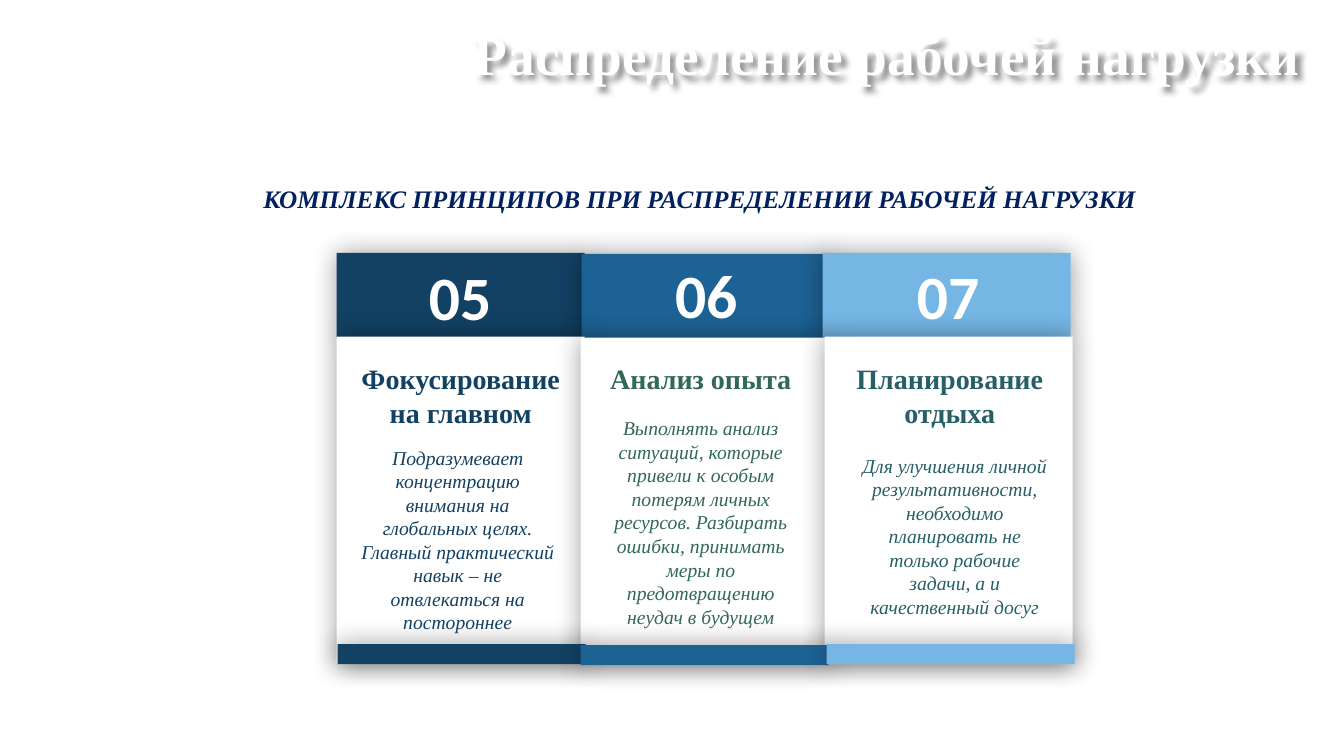
from lxml.etree import SubElement
from pptx import Presentation
from pptx.dml.color import RGBColor
from pptx.enum.shapes import MSO_SHAPE as Preset
from pptx.enum.text import MSO_ANCHOR as Anchor, PP_ALIGN as Align
from pptx.oxml.ns import qn
from pptx.util import Emu, Pt

PX = 9144
SERIF = "Times New Roman"
CARD_WIDTH = 246

TITLE = ("Распределение рабочей нагрузки", (460, 0, 874, 114))
SUBTITLE = ("КОМПЛЕКС ПРИНЦИПОВ ПРИ РАСПРЕДЕЛЕНИИ РАБОЧЕЙ НАГРУЗКИ", (203, 177, 982, 40))

CARDS = [
    {
        "fill": "134163", "ink": "134163",
        "header": (334, 251), "body": (334, 334), "footer": (335, 639),
        "number": ("05", (415, 252, 83, 84)),
        "heading": ("Фокусирование на главном", (347, 354, 220, 77)),
        "detail": (
            "Подразумевает концентрацию внимания на глобальных целях. "
            "Главный практический навык – не отвлекаться на постороннее",
            (348, 437, 212, 199),
        ),
    },
    {
        "fill": "1D6294", "ink": "316857",
        "header": (577, 252), "body": (576, 335), "footer": (576, 640),
        "number": ("06", (659, 250, 83, 84)),
        "heading": ("Анализ опыта", (589, 354, 212, 44)),
        "detail": (
            "Выполнять анализ ситуаций, которые привели к особым потерям личных ресурсов. "
            "Разбирать ошибки, принимать меры по предотвращению неудач в будущем",
            (589, 408, 212, 222),
        ),
    },
    {
        "fill": "75B6E5", "ink": "266066",
        "header": (816, 251), "body": (818, 334), "footer": (820, 639),
        "number": ("07", (899, 251, 83, 84)),
        "heading": ("Планирование отдыха", (836, 354, 212, 77)),
        "detail": (
            "Для улучшения личной результативности, необходимо планировать "
            "не только рабочие задачи, а и качественный досуг",
            (841, 445, 212, 175),
        ),
    },
]
LAYER_HEIGHTS = {"header": 84, "body": 325, "footer": 20}
TEXT_FORMATS = {
    "number": {"size": Pt(44), "name": "Calibri", "bold": True},
    "heading": {"size": Pt(20), "name": SERIF, "bold": True},
    "detail": {"size": Pt(14), "name": SERIF, "italic": True},
}


def color(value):
    return RGBColor.from_string(value)


def scaled(box):
    return [Emu(length * PX) for length in box]


def add_shadow(shape, blur, distance, angle, opacity):
    shape.shadow.inherit = False
    effects = shape._element.spPr.find(qn("a:effectLst"))
    shadow = SubElement(
        effects, qn("a:outerShdw"), blurRad=str(Pt(blur)), dist=str(Pt(distance)),
        dir=str(angle * 60000), algn="ctr", rotWithShape="0",
    )
    black = SubElement(shadow, qn("a:srgbClr"), val="000000")
    SubElement(black, qn("a:alpha"), val=str(opacity * 1000))


def add_panel(slide, box, fill):
    shape = slide.shapes.add_shape(Preset.RECTANGLE, *scaled(box))
    shape.fill.solid()
    shape.fill.fore_color.rgb = color(fill)
    shape.line.fill.background()
    add_shadow(shape, 19, 0, 0, 40)


def add_text(slide, content, ink, formats, align=Align.CENTER, wrap=True):
    text, box = content
    shape = slide.shapes.add_textbox(*scaled(box))
    shape.text_frame.word_wrap = wrap
    paragraph = shape.text_frame.paragraphs[0]
    paragraph.alignment = align
    run = paragraph.add_run()
    run.text = text
    run.font.color.rgb = color(ink)
    for key, value in formats.items():
        setattr(run.font, key, value)
    return shape


def main():
    presentation = Presentation()
    presentation.slide_width, presentation.slide_height = scaled((1333, 750))
    slide = presentation.slides.add_slide(presentation.slide_layouts[6])

    for layer, height in LAYER_HEIGHTS.items():
        for card in CARDS:
            fill = "FFFFFF" if layer == "body" else card["fill"]
            add_panel(slide, (*card[layer], CARD_WIDTH, height), fill)

    for card in CARDS:
        for part, formats in TEXT_FORMATS.items():
            is_number = part == "number"
            ink = "FFFFFF" if is_number else card["ink"]
            add_text(slide, card[part], ink, formats, wrap=not is_number)

    title_format = {"size": Pt(39.6), "name": SERIF, "bold": True}
    title = add_text(slide, TITLE, "FFFFFF", title_format, Align.LEFT)
    title.text_frame.vertical_anchor = Anchor.MIDDLE
    title.text_frame.paragraphs[0].line_spacing = 0.9
    add_shadow(title, 4, 4, 45, 43)

    subtitle_format = {"size": Pt(18), "name": SERIF, "bold": True, "italic": True}
    add_text(slide, SUBTITLE, "002060", subtitle_format)
    presentation.save("out.pptx")


if __name__ == "__main__":
    main()
